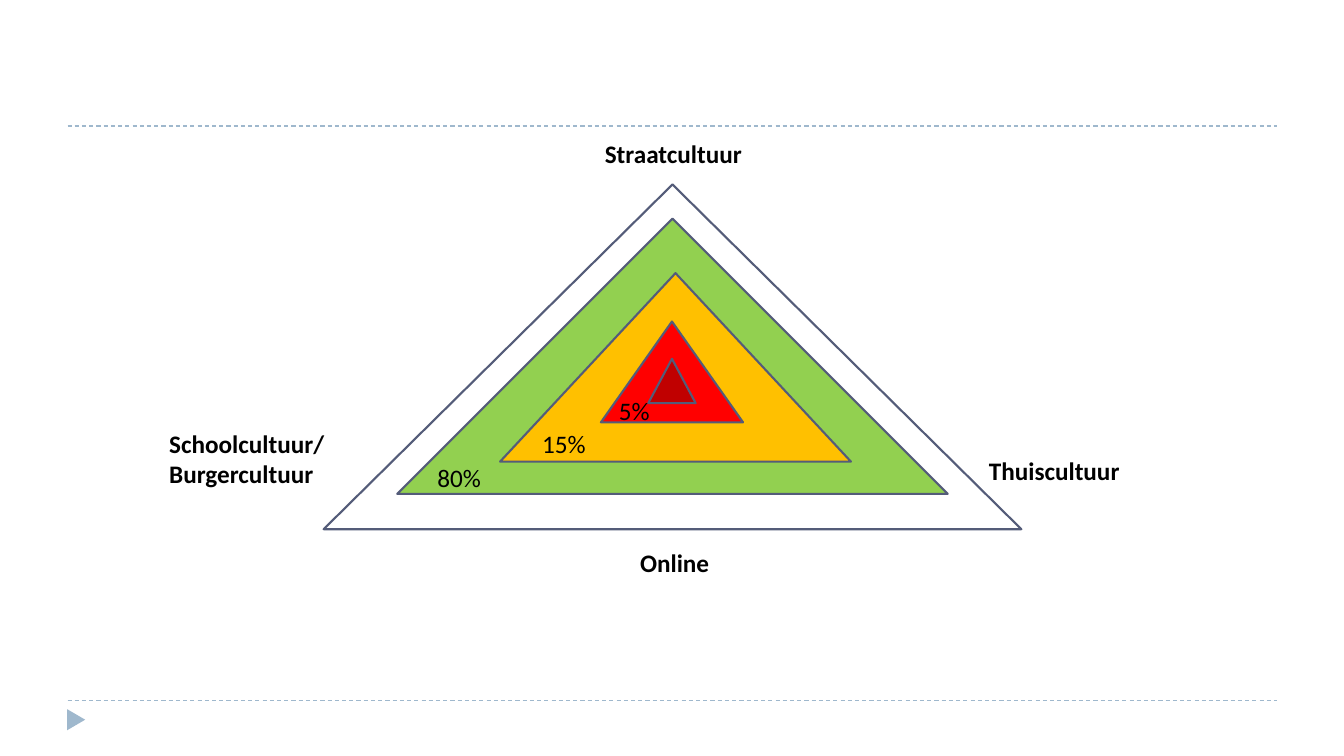
from pptx import Presentation, util as u
from pptx.dml.color import RGBColor
from pptx.enum import dml, shapes, text
from pptx.oxml.ns import qn
from lxml import etree

COLORS = {
    "rule": "9FB8CD", "outline": "545C79", "text": "000000", "outer": "FFFFFF",
    "green": "92D050", "amber": "FFC000", "red": "FF0000", "core": "C00000",
}
LABEL_FONT = {"name": "Calibri", "size": u.Pt(18)}

# Left, top, width, height, fill; from the outermost level inwards
LEVELS = [
    (3.21, 1.83, 6.92, 3.42, "outer"),
    (3.94, 2.17, 5.46, 2.73, "green"),
    (4.96, 2.71, 3.48, 1.87, "amber"),
    (5.96, 3.19, 1.41, 1.0, "red"),
    (6.43, 3.56, 0.47, 0.44, "core"),
]
# Wording, left, top, width, height, wrap
CULTURES = [
    ("Schoolcultuur/\vBurgercultuur", 1.58, 4.2, 2.04, 0.71, True),
    ("Straatcultuur", 5.9, 1.32, 2.48, 0.4, True),
    ("Thuiscultuur", 9.71, 4.47, 2.36, 0.4, True),
    ("Online", 6.25, 5.38, 0.99, 0.4, False),
]
SHARES = [
    ("80%", 4.24, 4.54, 0.96, 0.4, True),
    ("15%", 5.28, 4.2, 0.64, 0.4, False),
    ("5%", 6.04, 3.87, 0.97, 0.4, True),
]


def rgb(name):
    return RGBColor.from_string(COLORS[name])


def add_rule(slide, y):
    rule = slide.shapes.add_connector(
        shapes.MSO_CONNECTOR.STRAIGHT,
        u.Inches(0.67), u.Inches(y), u.Inches(12.67), u.Inches(y))
    rule.line.color.rgb = rgb("rule")
    rule.line.width = u.Pt(0.75)
    rule.line.dash_style = dml.MSO_LINE.DASH
    etree.SubElement(rule._element.spPr, qn("a:effectLst"))


def add_triangle(slide, left, top, width, height, fill, outline=None):
    triangle = slide.shapes.add_shape(
        shapes.MSO_SHAPE.ISOSCELES_TRIANGLE,
        *map(u.Inches, (left, top, width, height)))
    triangle.shadow.inherit = False
    triangle.fill.solid()
    triangle.fill.fore_color.rgb = rgb(fill)
    if outline:
        triangle.line.color.rgb = rgb(outline)
        triangle.line.width = u.Pt(1.5)
    else:
        triangle.line.fill.background()
    return triangle


def add_label(slide, wording, left, top, width, height, wrap, bold):
    label = slide.shapes.add_textbox(*map(u.Inches, (left, top, width, height)))
    frame = label.text_frame
    frame.word_wrap = wrap
    frame.auto_size = text.MSO_AUTO_SIZE.SHAPE_TO_FIT_TEXT
    paragraph = frame.paragraphs[0]
    paragraph.text = wording
    for run in paragraph.runs:
        for attribute, value in {**LABEL_FONT, "bold": bold}.items():
            setattr(run.font, attribute, value)
        run.font.color.rgb = rgb("text")


def main():
    deck = Presentation()
    deck.slide_width, deck.slide_height = u.Inches(13.33), u.Inches(7.5)
    slide = deck.slides.add_slide(deck.slide_layouts[6])

    # Frame of the page: two dashed rules and the footer marker
    for y in (6.95, 1.25):
        add_rule(slide, y)
    marker = add_triangle(slide, 0.65, 7.05, 0.21, 0.18, "rule")
    marker.rotation = 90

    # Nested levels
    for level in LEVELS:
        add_triangle(slide, *level, outline="outline")

    # Cultures around the triangle, shares inside it
    for labels, bold in ((CULTURES, True), (SHARES, False)):
        for label in labels:
            add_label(slide, *label, bold=bold)

    deck.save("out.pptx")


if __name__ == "__main__":
    main()
